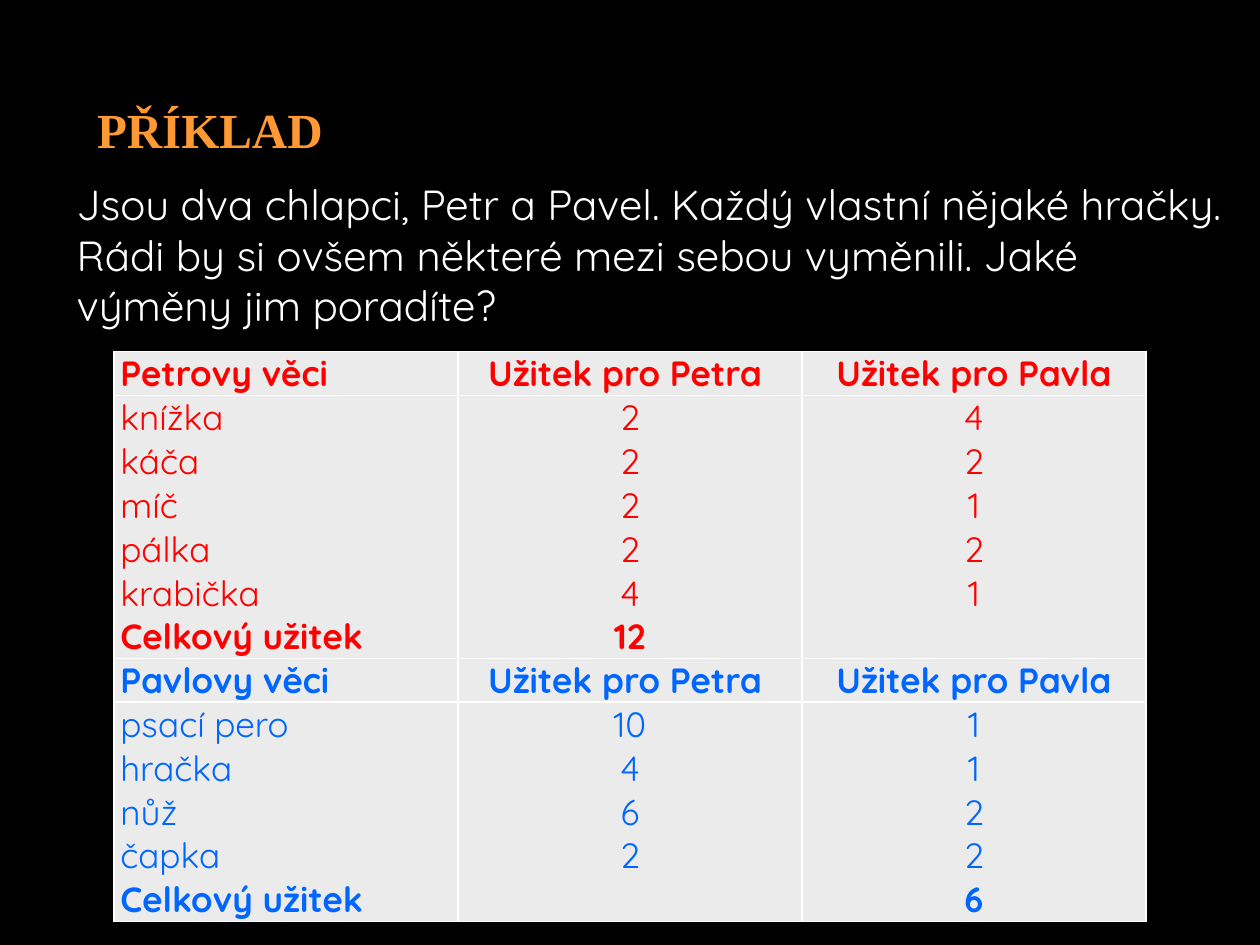
from dataclasses import dataclass

from lxml import etree
from pptx import Presentation
from pptx.dml.color import RGBColor
from pptx.enum.text import MSO_ANCHOR, MSO_AUTO_SIZE, PP_ALIGN
from pptx.oxml.ns import qn
from pptx.util import Emu, Inches, Pt

LEFT, CENTER = PP_ALIGN.LEFT, PP_ALIGN.CENTER
MIDDLE, TOP = MSO_ANCHOR.MIDDLE, MSO_ANCHOR.TOP
NO_FIT = MSO_AUTO_SIZE.NONE
TITLE_ONLY = 5
SLIDE_WIDTH, SLIDE_HEIGHT = Inches(10), Inches(7.5)


@dataclass(frozen=True)
class Theme:
    background: str = "000000"
    title: str = "FF9933"
    body: str = "FFFFFF"
    petr: str = "FF0000"
    pavel: str = "0066FF"
    cell: str = "EBEBEB"
    border: str = "FFFFFF"
    title_font: str = "Times New Roman"
    body_font: str = "Quicksand"
    title_size: int = 28
    body_size: int = 24
    table_size: int = 20


@dataclass(frozen=True)
class Area:
    """A rectangle in percent of the slide's width and height."""
    left: float
    top: float
    width: float
    height: float

    def lengths(self) -> tuple:
        return (Emu(int(SLIDE_WIDTH * self.left / 100)), Emu(int(SLIDE_HEIGHT * self.top / 100)),
                Emu(int(SLIDE_WIDTH * self.width / 100)), Emu(int(SLIDE_HEIGHT * self.height / 100)))


@dataclass(frozen=True)
class Toy:
    name: str
    petr: int
    pavel: int


@dataclass(frozen=True)
class Owner:
    heading: str
    color: str
    column: int
    toys: tuple

    def columns(self) -> list:
        """Lines of the three cells; the total stands in the owner's column."""
        lines = [[toy.name for toy in self.toys],
                 [str(toy.petr) for toy in self.toys],
                 [str(toy.pavel) for toy in self.toys]]
        lines[self.column].append(str(sum(map(int, lines[self.column]))))
        lines[0].append("Celkový užitek")
        return lines


THEME = Theme()
TITLE_AREA = Area(6.7, 8.93, 77.5, 9.33)
QUESTION_AREA = Area(5.1, 18.27, 92.9, 19.2)
TABLE_AREA = Area(9.05, 37.2, 81.9, 60.3)
UTILITY_HEADINGS = ("Užitek pro Petra ", "Užitek pro Pavla")
QUESTION = ("Jsou dva chlapci, Petr a Pavel. Každý vlastní nějaké hračky. Rádi by si "
            "ovšem některé mezi sebou vyměnili. Jaké výměny jim poradíte?")
OWNERS = (
    Owner("Petrovy věci", THEME.petr, 1, (
        Toy("knížka", 2, 4), Toy("káča", 2, 2), Toy("míč", 2, 1),
        Toy("pálka", 2, 2), Toy("krabička", 4, 1))),
    Owner("Pavlovy věci", THEME.pavel, 2, (
        Toy("psací pero", 10, 1), Toy("hračka", 4, 1), Toy("nůž", 6, 2),
        Toy("čapka", 2, 2))),
)


def format_paragraph(para, font: str, size: int, color: str, bold=False, align=LEFT) -> None:
    para.alignment = align
    for span in para.runs:
        span.font.name = font
        span.font.size = Pt(size)
        span.font.bold = bold
        span.font.color.rgb = RGBColor.from_string(color)


def add_borders(cell) -> None:
    properties = cell._tc.get_or_add_tcPr()
    for index, side in enumerate(("a:lnL", "a:lnR", "a:lnT", "a:lnB")):
        line = etree.Element(qn(side), w=str(Pt(1)))
        fill = etree.SubElement(line, qn("a:solidFill"))
        etree.SubElement(fill, qn("a:srgbClr"), val=THEME.border)
        properties.insert(index, line)


def fill_cell(cell, lines: list, color: str, align, bold_from: int) -> None:
    """Write one line per paragraph, bold from the given line on."""
    cell.margin_left = cell.margin_right = Inches(0.05)
    cell.margin_top = cell.margin_bottom = 0
    cell.vertical_anchor = TOP
    cell.fill.solid()
    cell.fill.fore_color.rgb = RGBColor.from_string(THEME.cell)
    add_borders(cell)
    cell.text_frame.text = "\n".join(lines)
    for index, para in enumerate(cell.text_frame.paragraphs):
        format_paragraph(para, THEME.body_font, THEME.table_size, color,
                         index >= bold_from, align)


def add_utility_table(page) -> None:
    table = page.shapes.add_table(2 * len(OWNERS), 3, *TABLE_AREA.lengths()).table
    table.first_row = table.horz_banding = False
    # One unit of height for every line of text
    line_counts = [count for owner in OWNERS for count in (1, len(owner.toys) + 1)]
    unit = TABLE_AREA.lengths()[3] // sum(line_counts)
    for row, count in zip(table.rows, line_counts):
        row.height = Emu(unit * count)

    for index, owner in enumerate(OWNERS):
        headings = (owner.heading, *UTILITY_HEADINGS)
        for column, (heading, lines) in enumerate(zip(headings, owner.columns())):
            align = CENTER if column else LEFT
            fill_cell(table.cell(2 * index, column), [heading], owner.color, align, 0)
            fill_cell(table.cell(2 * index + 1, column), lines, owner.color, align,
                      len(owner.toys))


def place_title(page) -> None:
    title = page.shapes.title
    title.left, title.top, title.width, title.height = TITLE_AREA.lengths()
    frame = title.text_frame
    frame.text = "PŘÍKLAD"
    frame.auto_size = NO_FIT
    frame.vertical_anchor = MIDDLE
    format_paragraph(frame.paragraphs[0], THEME.title_font, THEME.title_size,
                     THEME.title, bold=True)


def add_question(page) -> None:
    frame = page.shapes.add_textbox(*QUESTION_AREA.lengths()).text_frame
    frame.word_wrap = True
    frame.text = QUESTION
    format_paragraph(frame.paragraphs[0], THEME.body_font, THEME.body_size, THEME.body)


def main() -> None:
    deck = Presentation()
    deck.slide_width, deck.slide_height = SLIDE_WIDTH, SLIDE_HEIGHT
    page = deck.slides.add_slide(deck.slide_layouts[TITLE_ONLY])
    page.background.fill.solid()
    page.background.fill.fore_color.rgb = RGBColor.from_string(THEME.background)

    # Heading, question and the table of utilities
    place_title(page)
    add_question(page)
    add_utility_table(page)
    deck.save("out.pptx")


if __name__ == "__main__":
    main()
